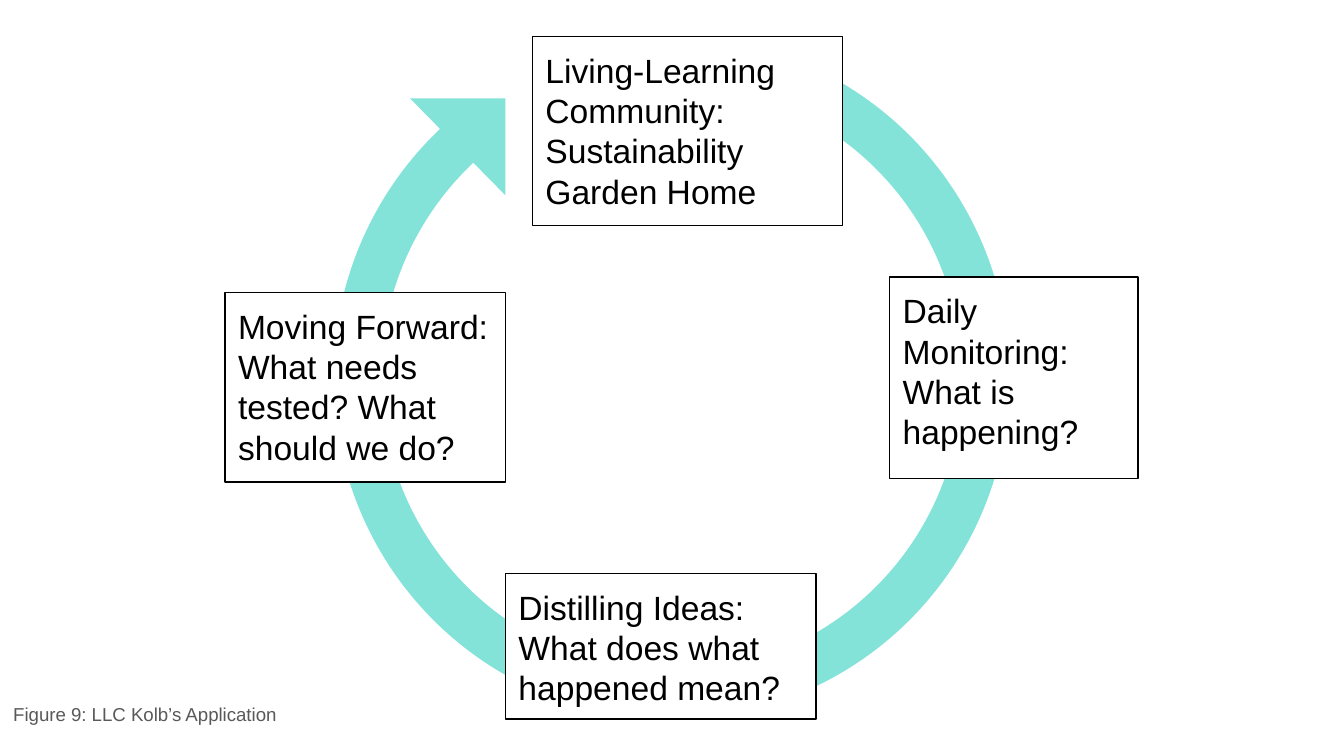
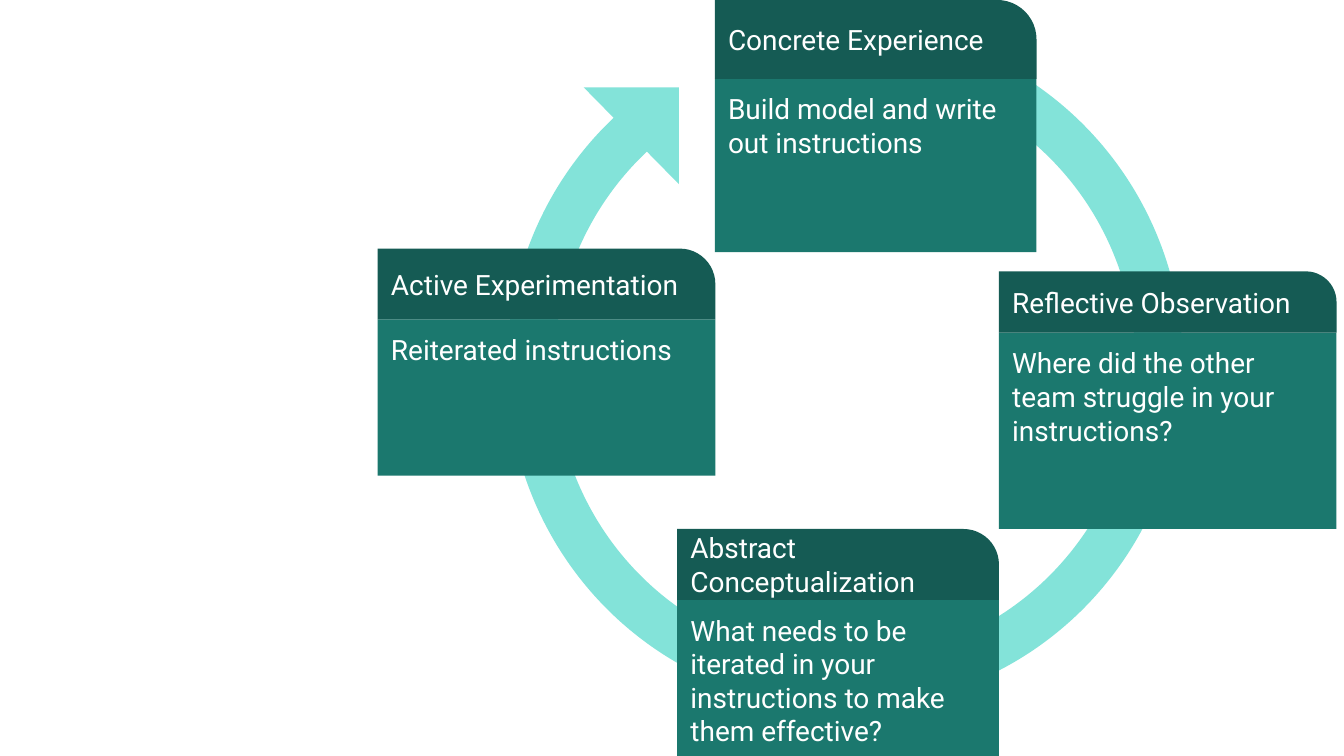
from dataclasses import dataclass

import pptx
import pptx.dml.color
import pptx.enum.shapes
import pptx.enum.text
import pptx.util

Cm = pptx.util.Cm
Shape = pptx.enum.shapes.MSO_SHAPE
Anchor = pptx.enum.text.MSO_ANCHOR


@dataclass(frozen=True)
class Theme:
    ring: str = "83E3D9"
    card_head: str = "155B54"
    card_body: str = "1B786E"
    white: str = "FFFFFF"
    black: str = "000000"
    caption: str = "595959"
    plain_font: str = "Arial"
    card_font: str = "Roboto"
    box_size: int = 18
    card_size: int = 15
    caption_size: int = 10
    outline: float = 0.75
    inset: float = 0.25


class CycleDeck:
    def __init__(self, theme):
        self.theme = theme
        self.deck = pptx.Presentation()
        self.deck.slide_width = Cm(25.4)
        self.deck.slide_height = Cm(14.29)
        self.page = None

    def color(self, value):
        return pptx.dml.color.RGBColor.from_string(value)

    def new_page(self):
        self.page = self.deck.slides.add_slide(self.deck.slide_layouts[6])

    def shape(self, parent, kind, area, fill, line=None):
        shape = parent.shapes.add_shape(kind, *map(Cm, area))
        shape.shadow.inherit = False
        shape.fill.solid()
        shape.fill.fore_color.rgb = self.color(fill)
        if line:
            shape.line.color.rgb = self.color(line)
            shape.line.width = pptx.util.Pt(self.theme.outline)
        else:
            shape.line.fill.background()
        return shape

    def set_text(self, shape, lines, font, size, color, anchor=Anchor.TOP):
        frame = shape.text_frame
        frame.word_wrap = True
        frame.vertical_anchor = anchor
        frame.margin_left = frame.margin_right = Cm(self.theme.inset)
        frame.margin_top = frame.margin_bottom = Cm(self.theme.inset)
        frame.text = "\n".join(lines)
        for para in frame.paragraphs:
            para.alignment = pptx.enum.text.PP_ALIGN.LEFT
            para.font.name = font
            para.font.size = pptx.util.Pt(size)
            para.font.color.rgb = self.color(color)

    def cycle_arrow(self, left, top):
        group = self.page.shapes.add_group_shape()
        arc = self.shape(group, Shape.BLOCK_ARC, (left, top, 12.78, 12.9), self.theme.ring)
        for index, value in enumerate((54, 30.13, 0.07)):
            arc.adjustments[index] = value
        head_area = (left + 1.45, top + 1.17, 1.8, 1.83)
        head = self.shape(group, Shape.RIGHT_TRIANGLE, head_area, self.theme.ring)
        arc.rotation = head.rotation = 180

    def outlined_box(self, area, *lines):
        theme = self.theme
        box = self.shape(self.page, Shape.RECTANGLE, area, theme.white, theme.black)
        self.set_text(box, lines, theme.plain_font, theme.box_size, theme.black)

    def caption(self, area, text):
        theme = self.theme
        box = self.page.shapes.add_textbox(*map(Cm, area))
        self.set_text(box, [text], theme.plain_font, theme.caption_size, theme.caption)

    def card(self, left, top, width, head_height, body_height, title, text):
        theme = self.theme
        group = self.page.shapes.add_group_shape()
        body_area = (left, top + head_height, width, body_height)
        body = self.shape(group, Shape.RECTANGLE, body_area, theme.card_body)
        head_area = (left, top, width, head_height)
        head = self.shape(group, Shape.ROUND_1_RECTANGLE, head_area, theme.card_head)
        head.adjustments[0] = 0.5
        self.set_text(body, [text], theme.card_font, theme.card_size, theme.white)
        self.set_text(head, [title], theme.card_font, theme.card_size, theme.white,
                      Anchor.MIDDLE)


def application_page(cycle):
    cycle.new_page()
    cycle.cycle_arrow(6.3, 0.69)
    cycle.outlined_box((10.06, 0.69, 5.87, 3.58),
                       "Living-Learning Community: Sustainability Garden Home")
    cycle.outlined_box((16.81, 5.24, 4.7, 3.81), "Daily Monitoring:", "What is happening?")
    cycle.outlined_box((9.55, 10.84, 5.87, 2.75),
                       "Distilling Ideas: What does what happened mean?")
    cycle.outlined_box((4.25, 5.53, 5.3, 3.58),
                       "Moving Forward: What needs tested? What should we do?")
    cycle.caption((0, 13.08, 5.64, 1.19), "Figure 9: LLC Kolb’s Application")


def experience_page(cycle):
    cycle.new_page()
    cycle.cycle_arrow(9.58, 0.48)
    narrow, wide = 6.08, 6.38
    cycle.card(13.51, 0, narrow, 1.49, 3.28, "Concrete Experience",
               "Build model and write out instructions")
    cycle.card(18.88, 5.13, wide, 1.16, 3.71, "Reflective Observation",
               "Where did the other team struggle in your instructions?")
    cycle.card(12.8, 10, narrow, 1.34, 2.95, "Abstract Conceptualization",
               "What needs to be iterated in your instructions to make them effective?")
    cycle.card(7.14, 4.7, wide, 1.34, 2.95, "Active Experimentation",
               "Reiterated instructions")


def main():
    cycle = CycleDeck(Theme())
    application_page(cycle)
    experience_page(cycle)
    cycle.deck.save("out.pptx")


if __name__ == "__main__":
    main()
